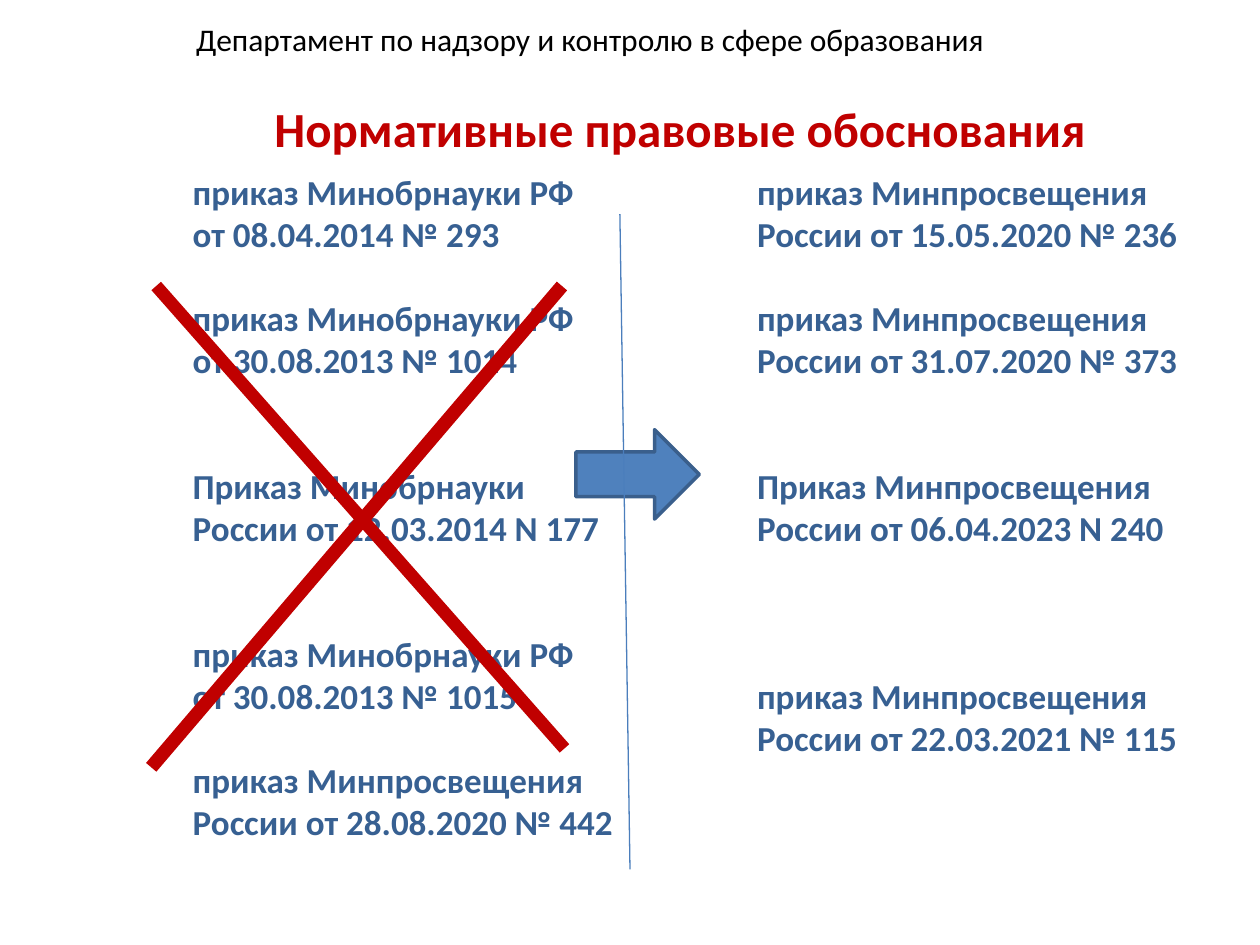
from dataclasses import dataclass

from lxml.etree import SubElement
from pptx import Presentation
from pptx.dml.color import RGBColor
from pptx.enum.shapes import MSO_CONNECTOR as Connector, MSO_SHAPE as Shape
from pptx.enum.text import MSO_ANCHOR as Anchor, MSO_AUTO_SIZE as AutoSize, PP_ALIGN as Align
from pptx.oxml.ns import qn
from pptx.util import Inches, Pt

FONT = "Calibri"
RED = "C00000"
TEXT_BLUE = "376092"
LINE_HEIGHT = 24


@dataclass(frozen=True)
class Box:
    left: float
    top: float
    width: float
    height: float

    def lengths(self) -> tuple:
        return tuple(Inches(n) for n in (self.left, self.top, self.width, self.height))


@dataclass(frozen=True)
class TextStyle:
    size: int
    color: str
    bold: bool = False
    align: Align = Align.LEFT


@dataclass(frozen=True)
class Entry:
    text: str
    lines_before: int = 0


@dataclass(frozen=True)
class Stroke:
    start: tuple[float, float]
    end: tuple[float, float]
    color: str
    width: float


ORDER_STYLE = TextStyle(20, TEXT_BLUE, True)

REPEALED_ORDERS = [
    Entry("приказ Минобрнауки РФ"),
    Entry("от 08.04.2014 № 293"),
    Entry("приказ Минобрнауки РФ", 1),
    Entry("от 30.08.2013 № 1014"),
    Entry("Приказ Минобрнауки России от 12.03.2014 N 177", 2),
    Entry("приказ Минобрнауки РФ", 2),
    Entry("от 30.08.2013 № 1015"),
    Entry("приказ Минпросвещения России от 28.08.2020 № 442", 1),
]

CURRENT_ORDERS = [
    Entry("приказ Минпросвещения России от 15.05.2020 № 236"),
    Entry("приказ Минпросвещения России от 31.07.2020 № 373", 1),
    Entry("Приказ Минпросвещения России от 06.04.2023 N 240", 2),
    Entry("приказ Минпросвещения России от 22.03.2021 № 115", 3),
]

STROKES = [
    Stroke((4.92, 1.7), (5, 6.9), "4B7EBC", 0.75),
    Stroke((1.24, 2.27), (4.48, 5.94), RED, 7.25),
    Stroke((4.46, 2.27), (1.2, 6.09), RED, 7.75),
]


def rgb(value: str) -> RGBColor:
    return RGBColor.from_string(value)


def write_text(shape, entries: list[Entry], style: TextStyle) -> None:
    frame = shape.text_frame
    frame.word_wrap = True
    frame.auto_size = AutoSize.NONE
    frame.vertical_anchor = Anchor.TOP
    for index, entry in enumerate(entries):
        paragraph = frame.paragraphs[0] if index == 0 else frame.add_paragraph()
        paragraph.alignment = style.align
        if entry.lines_before:
            paragraph.space_before = Pt(entry.lines_before * LINE_HEIGHT)
        run = paragraph.add_run()
        run.text = entry.text
        run.font.name = FONT
        run.font.size = Pt(style.size)
        run.font.bold = style.bold
        run.font.color.rgb = rgb(style.color)


def add_text(slide, box: Box, entries: list[Entry], style: TextStyle) -> None:
    write_text(slide.shapes.add_textbox(*box.lengths()), entries, style)


def set_title(slide, box: Box, text: str, style: TextStyle) -> None:
    title = slide.shapes.title
    title.left, title.top, title.width, title.height = box.lengths()
    write_text(title, [Entry(text)], style)


def add_arrow(slide, box: Box, fill: str, outline: str) -> None:
    arrow = slide.shapes.add_shape(Shape.RIGHT_ARROW, *box.lengths())
    arrow.shadow.inherit = False
    arrow.fill.solid()
    arrow.fill.fore_color.rgb = rgb(fill)
    arrow.line.color.rgb = rgb(outline)
    arrow.line.width = Pt(2)


def add_stroke(slide, stroke: Stroke) -> None:
    points = [Inches(n) for n in (*stroke.start, *stroke.end)]
    connector = slide.shapes.add_connector(Connector.STRAIGHT, *points)
    connector.line.color.rgb = rgb(stroke.color)
    connector.line.width = Pt(stroke.width)
    SubElement(connector._element.spPr, qn("a:effectLst"))


def main() -> None:
    presentation = Presentation()
    presentation.slide_width = Inches(10)
    presentation.slide_height = Inches(7.5)
    slide = presentation.slides.add_slide(presentation.slide_layouts[5])

    set_title(slide, Box(1.89, 0.73, 7.01, 0.57), "Нормативные правовые обоснования",
              TextStyle(28, RED, True, Align.CENTER))
    add_text(slide, Box(5.91, 1.3, 3.71, 5.49), CURRENT_ORDERS, ORDER_STYLE)
    add_text(slide, Box(1.43, 1.3, 3.55, 5.82), REPEALED_ORDERS, ORDER_STYLE)
    add_text(slide, Box(1.22, 0.11, 6.69, 0.49),
             [Entry("Департамент по надзору и контролю в сфере образования")],
             TextStyle(18, "000000", align=Align.RIGHT))
    add_arrow(slide, Box(4.57, 3.41, 0.98, 0.71), "4F81BD", "3A5F8C")
    for stroke in STROKES:
        add_stroke(slide, stroke)

    presentation.save("out.pptx")


if __name__ == "__main__":
    main()
